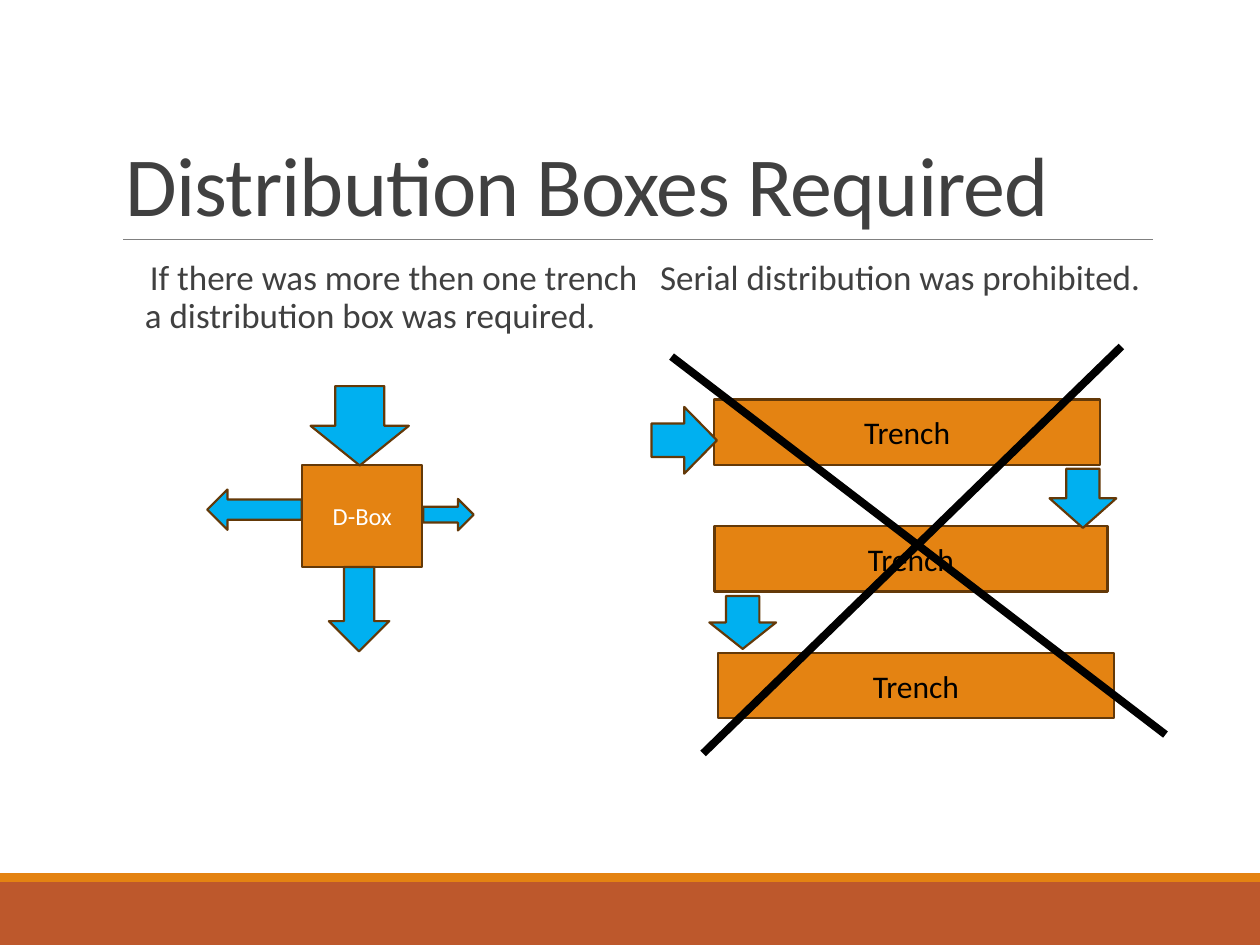
from dataclasses import dataclass
from lxml.etree import SubElement
from pptx import Presentation
from pptx.dml.color import RGBColor as RGB
from pptx.enum.shapes import MSO_CONNECTOR as Link, MSO_SHAPE as Shape
from pptx.enum.text import MSO_ANCHOR as Anchor, PP_ALIGN as Align
from pptx.oxml.ns import qn
from pptx.util import Inches, Pt

WIDTH, HEIGHT = Inches(10), Inches(7.5)
COLUMNS, ROWS = 100, 75


@dataclass(frozen=True)
class Theme:
    font: str = "Calibri"
    ink: str = "404040"
    rule: str = "808080"
    earth: str = "E48312"
    footer: str = "BD582C"
    water: str = "00B0F0"
    edge: str = "643908"
    black: str = "000000"
    white: str = "FFFFFF"
    title_size: float = 48
    body_size: float = 20
    trench_size: float = 18
    box_size: float = 14
    edge_width: float = 1.25
    rule_width: float = 0.5
    cross_width: float = 4.5


THEME = Theme()


def col(count):
    return round(WIDTH * count / COLUMNS)


def row(count):
    return round(HEIGHT * count / ROWS)


def place(left, top, width, height):
    return col(left), row(top), col(width), row(height)


def apply(target, values):
    for name, value in values.items():
        setattr(target, name, value)


def write(frame, words, size, color, frame_format, paragraph_format):
    apply(frame, {"word_wrap": True, **frame_format})
    paragraph = frame.paragraphs[0]
    apply(paragraph, paragraph_format)
    run = paragraph.add_run()
    run.text = words
    apply(run.font, {"name": THEME.font, "size": Pt(size)})
    run.font.color.rgb = RGB.from_string(color)
    return paragraph, run


def add_block(slide, kind, area, fill, edge=THEME.edge, turn=0):
    block = slide.shapes.add_shape(kind, *place(*area))
    block.shadow.inherit = False
    block.rotation = turn
    block.fill.solid()
    block.fill.fore_color.rgb = RGB.from_string(fill)
    if edge:
        block.line.color.rgb = RGB.from_string(edge)
        block.line.width = Pt(THEME.edge_width)
    else:
        block.line.fill.background()
    return block


def add_labelled_box(slide, area, label, size, color):
    box = add_block(slide, Shape.RECTANGLE, area, THEME.earth)
    write(box.text_frame, label, size, color,
          {"vertical_anchor": Anchor.MIDDLE}, {"alignment": Align.CENTER})


def add_stroke(slide, start, end, color, width):
    stroke = slide.shapes.add_connector(
        Link.STRAIGHT, col(start[0]), row(start[1]), col(end[0]), row(end[1]))
    stroke.line.color.rgb = RGB.from_string(color)
    stroke.line.width = Pt(width)
    SubElement(stroke._element.spPr, qn("a:effectLst"))


def add_title(slide, words):
    frame = slide.shapes.add_textbox(*place(9, 3.1, 82.5, 15.9)).text_frame
    _, run = write(frame, words, THEME.title_size, THEME.ink,
                   {"vertical_anchor": Anchor.BOTTOM}, {"line_spacing": 0.85})
    run._r.get_or_add_rPr().set("spc", "-50")


def add_statement(slide, left, words):
    frame = slide.shapes.add_textbox(*place(left, 20.2, 40.5, 44)).text_frame
    paragraph, _ = write(
        frame, words, THEME.body_size, THEME.ink,
        {"margin_left": 0, "margin_right": 0},
        {"line_spacing": 0.9, "space_before": Pt(12), "space_after": Pt(2)})
    properties = paragraph._p.get_or_add_pPr()
    properties.set("marL", str(col(1)))
    properties.set("indent", str(-col(1)))
    bullet_color = SubElement(properties, qn("a:buClr"))
    SubElement(bullet_color, qn("a:srgbClr")).set("val", THEME.earth)
    SubElement(properties, qn("a:buChar")).set("char", " ")


def add_flows(slide, flows):
    for kind, area, turn in flows:
        add_block(slide, kind, area, THEME.water, turn=turn)


def add_frame(slide):
    add_block(slide, Shape.RECTANGLE, (0, 70, COLUMNS, 5), THEME.footer, None)
    add_block(slide, Shape.RECTANGLE, (0, 69.3, COLUMNS, 0.7), THEME.earth, None)
    add_stroke(slide, (9.8, 19), (91.5, 19), THEME.rule, THEME.rule_width)


def add_distribution_box(slide):
    add_labelled_box(slide, (24, 36.9, 9.5, 8.1), "D-Box",
                     THEME.box_size, THEME.white)
    add_flows(slide, [
        (Shape.RIGHT_ARROW, (25.4, 29.9, 6.3, 7.8), 90),
        (Shape.DOWN_ARROW, (18.6, 36.7, 3.2, 7.5), 90),
        (Shape.RIGHT_ARROW, (33.6, 39.6, 4, 2.5), 0),
        (Shape.DOWN_ARROW, (26.1, 45, 4.8, 6.7), 0),
    ])


def add_serial_trenches(slide):
    first_top, pitch, depth = 31.7, 10.05, 5.2
    for index, (left, length) in enumerate([(56.7, 30.6), (56.7, 31.2), (57, 31.4)]):
        add_labelled_box(slide, (left, first_top + index * pitch, length, depth),
                         "Trench", THEME.trench_size, THEME.black)
    add_flows(slide, [
        (Shape.RIGHT_ARROW, (51.7, 32.3, 5.2, 5.3), 0),
        (Shape.DOWN_ARROW, (83.3, 37.2, 5.3, 4.7), 0),
        (Shape.DOWN_ARROW, (56.3, 47.3, 5.3, 4.2), 0),
    ])
    for start, end in [((89, 27.5), (55.8, 59.8)), ((53.3, 28.3), (92.5, 58.3))]:
        add_stroke(slide, start, end, THEME.black, THEME.cross_width)


def main():
    deck = Presentation()
    apply(deck, {"slide_width": WIDTH, "slide_height": HEIGHT})
    slide = deck.slides.add_slide(deck.slide_layouts[6])
    add_frame(slide)
    add_title(slide, "Distribution Boxes Required")
    add_statement(slide, 10.5, "If there was more then one trench "
                               "a distribution box was required.")
    add_statement(slide, 51, "Serial distribution was prohibited.")
    add_distribution_box(slide)
    add_serial_trenches(slide)
    deck.save("out.pptx")


if __name__ == "__main__":
    main()
